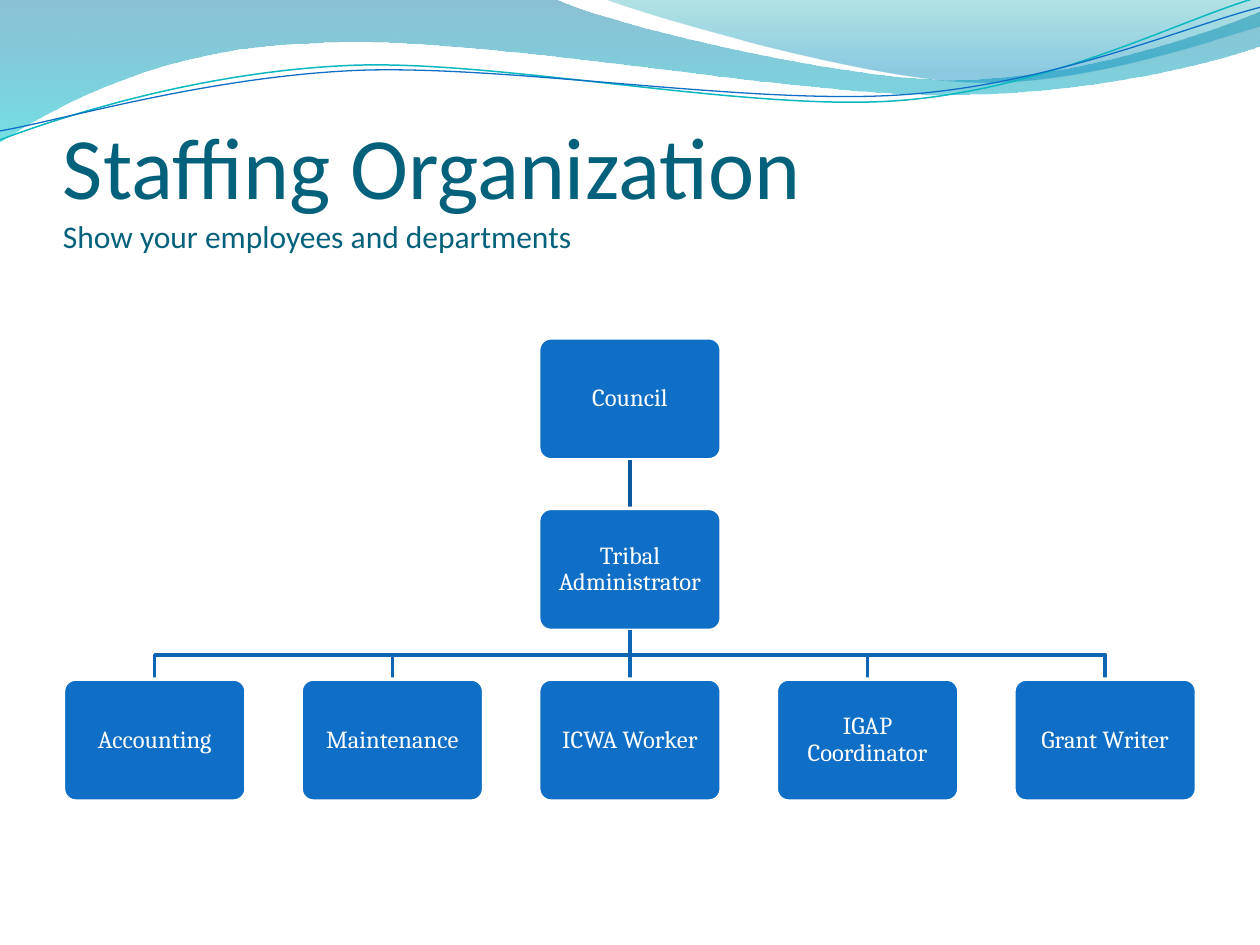
from dataclasses import dataclass

from lxml.etree import SubElement
from pptx import Presentation
from pptx.dml.color import RGBColor
from pptx.enum.shapes import MSO_SHAPE
from pptx.enum.text import MSO_ANCHOR, PP_ALIGN
from pptx.oxml.ns import qn
from pptx.oxml.xmlchemy import OxmlElement
from pptx.util import Cm, Pt

BLUE, WHITE, TEAL = "0F6FC6", "FFFFFF", "04617B"
BOX_W, BOX_H = 3.68, 2.46
CENTER, TOP = 12.7, 6.81
COL_STEP, ROW_STEP = 4.79, 3.44


@dataclass
class Stop:
    color: str
    position: float
    alpha: int


@dataclass
class Wave:
    segments: list
    stops: tuple = ()
    line: str = ""
    width: float = 0


@dataclass
class Position:
    name: str
    column: int
    row: int
    link: str = ""

    @property
    def x(self) -> float:
        return CENTER + self.column * COL_STEP

    @property
    def y(self) -> float:
        return TOP + self.row * ROW_STEP


WAVES = [
    Wave([
        (0, 0),
        (11.18, -0.03),
        (12.09, 0.43, 16.87, 1.6, 19.25, 1.6),
        (21.67, 1.6, 24.33, 0.66, 25.4, 0.23),
        (25.43, 0.91),
        (24.97, 1.12, 22.1, 1.93, 18.95, 1.91),
        (15.8, 1.91, 9.7, 0.71, 6.53, 0.86),
        (3.28, 0.91, 1.17, 2.11, -0.03, 2.87),
        (0, 0),
    ], stops=(Stop("0074A1", 0, 45), Stop("00C6CF", 1, 55))),
    Wave([
        (12.17, -0.03),
        (12.93, 0.28, 17.32, 1.57, 19.53, 1.65),
        (21.74, 1.75, 24.41, 0.81, 25.4, 0.53),
        (25.4, 0),
        (12.17, -0.03),
    ], stops=(Stop("00A1A9", 0, 30), Stop("008BBF", 0.8, 45))),
    Wave([
        (0, 2.82),
        (1.22, 2.36, 4.01, 1.45, 7.04, 1.32),
        (10.03, 1.19, 15.06, 2.26, 18.11, 2.03),
        (21.16, 1.8, 23.83, 0.38, 25.35, -0.05),
    ], line="0AB8BF", width=0.85),
    Wave([
        (0, 2.64),
        (1.19, 2.44, 4.17, 1.55, 7.19, 1.42),
        (10.24, 1.3, 15.16, 2.13, 18.21, 1.91),
        (21.23, 1.7, 23.9, 0.53, 25.4, 0.15),
    ], line=BLUE, width=0.75),
]

DEPARTMENTS = ["Accounting", "Maintenance", "ICWA Worker", "IGAP Coordinator", "Grant Writer"]
POSITIONS = [
    Position("Council", 0, 0),
    Position("Tribal Administrator", 0, 1, "0C599F"),
    *(Position(name, i - 2, 2, "0E65B4") for i, name in enumerate(DEPARTMENTS)),
]


def rgb(color: str) -> RGBColor:
    return RGBColor.from_string(color)


def add_outline(s, segments: list, close: bool = False):
    """Add an unfilled freeform in centimetres; six-number segments are cubic curves."""
    points = [(Cm(seg[i]), Cm(seg[i + 1])) for seg in segments for i in range(0, len(seg), 2)]
    builder = s.shapes.build_freeform(*points[0])
    builder.add_line_segments(points[1:], close=close)
    sp = builder.convert_to_shape()
    lines = iter(list(sp._element.spPr.iter(qn("a:lnTo"))))
    for segment in segments[1:]:
        line = next(lines)
        if len(segment) == 6:
            curve = OxmlElement("a:cubicBezTo")
            line.addprevious(curve)
            for part in (line, next(lines), next(lines)):
                curve.append(part[0])
                part.getparent().remove(part)
    sp.shadow.inherit = False
    sp.fill.background()
    return sp


def set_line(sp, color: str, width: float) -> None:
    sp.line.color.rgb = rgb(color)
    sp.line.width = Pt(width)


def add_wave(s, wave: Wave) -> None:
    """Draw a wave as a translucent gradient area or as a thin line."""
    sp = add_outline(s, wave.segments, close=bool(wave.stops))
    if wave.line:
        set_line(sp, wave.line, wave.width)
        return
    sp.line.fill.background()
    sp.fill.gradient()
    sp.fill.gradient_angle = 270
    for gradient_stop, stop in zip(sp.fill.gradient_stops, wave.stops):
        gradient_stop.color.rgb = rgb(stop.color)
        gradient_stop.position = stop.position
    for color, stop in zip(sp._element.spPr.iter(qn("a:srgbClr")), wave.stops):
        SubElement(color, qn("a:alpha")).set("val", str(stop.alpha * 1000))


def add_title(s, title: str, subtitle: str) -> None:
    tf = s.shapes.add_textbox(Cm(1.27), Cm(1.96), Cm(22.86), Cm(3.17)).text_frame
    tf.word_wrap = True
    tf.vertical_anchor = MSO_ANCHOR.BOTTOM
    tf.margin_left = tf.margin_right = tf.margin_bottom = 0
    tf.margin_top = Cm(0.13)
    p = tf.paragraphs[0]
    p.font.name = "Calibri"
    p.font.color.rgb = rgb(TEAL)
    for text, size in ((title, 50), (subtitle, 18)):
        if p.runs:
            p.add_line_break()
        r = p.add_run()
        r.text = text
        r.font.size = Pt(size)


def add_link(s, position: Position) -> None:
    """Join a position to the one above it in the centre column."""
    start = position.y - ROW_STEP + BOX_H
    points = [(CENTER, start), (position.x, position.y)]
    if position.column:
        middle = (start + position.y) / 2
        points[1:1] = [(CENTER, middle), (position.x, middle)]
    set_line(add_outline(s, points), position.link, 2)


def add_box(s, position: Position) -> None:
    sp = s.shapes.add_shape(MSO_SHAPE.ROUNDED_RECTANGLE, Cm(position.x - BOX_W / 2),
                            Cm(position.y), Cm(BOX_W), Cm(BOX_H))
    sp.adjustments[0] = 0.1
    sp.shadow.inherit = False
    sp.fill.solid()
    sp.fill.fore_color.rgb = rgb(BLUE)
    set_line(sp, WHITE, 2)
    tf = sp.text_frame
    tf.word_wrap = True
    tf.vertical_anchor = MSO_ANCHOR.MIDDLE
    tf.margin_left = tf.margin_right = tf.margin_top = tf.margin_bottom = Cm(0.15)
    p = tf.paragraphs[0]
    p.text = position.name
    p.alignment = PP_ALIGN.CENTER
    p.line_spacing = 0.9
    p.font.name = "Cambria"
    p.font.size = Pt(14)
    p.font.color.rgb = rgb(WHITE)


def main() -> None:
    prs = Presentation()
    prs.slide_width, prs.slide_height = Cm(25.4), Cm(19.05)
    s = prs.slides.add_slide(prs.slide_layouts[6])
    for wave in WAVES:
        add_wave(s, wave)
    add_title(s, "Staffing Organization", "Show your employees and departments")
    for position in POSITIONS:
        if position.link:
            add_link(s, position)
        add_box(s, position)
    prs.save("out.pptx")


if __name__ == "__main__":
    main()
